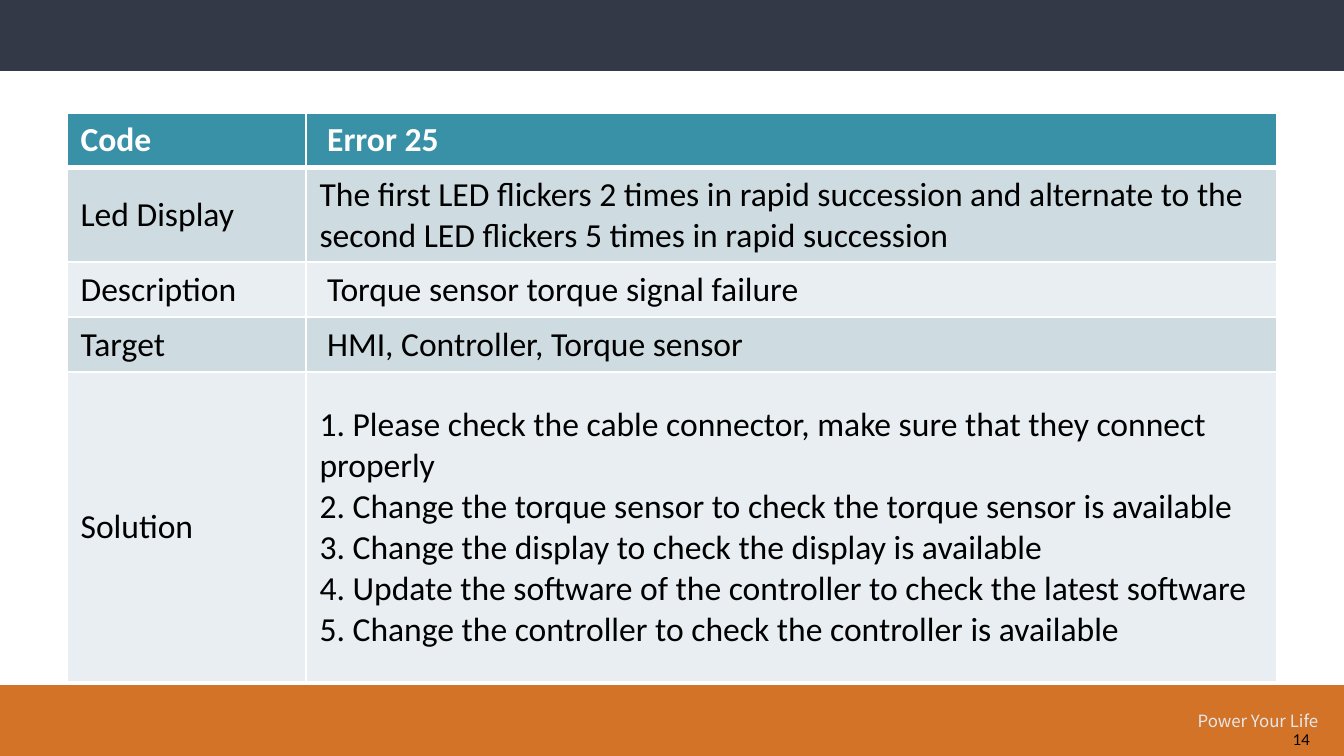
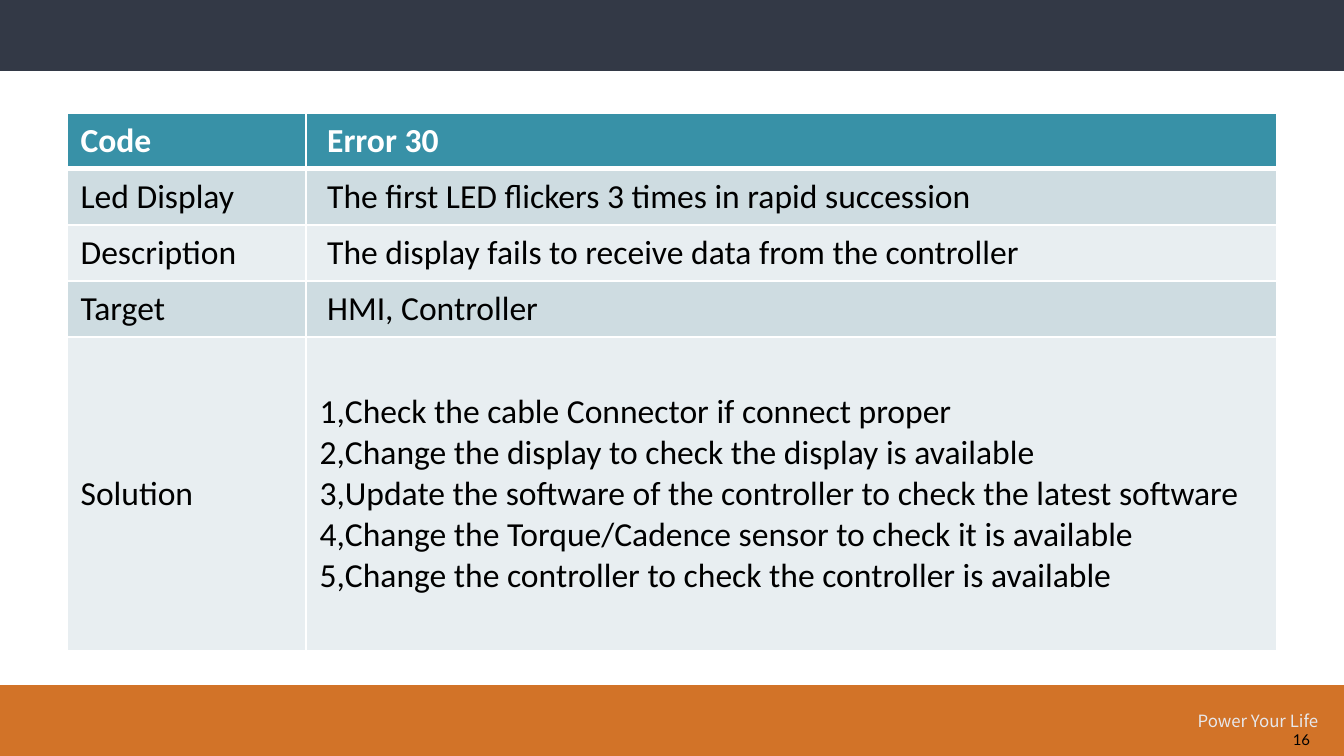
from lxml.etree import SubElement
from pptx import Presentation
from pptx.dml.color import RGBColor
from pptx.enum.shapes import MSO_SHAPE
from pptx.enum.text import MSO_ANCHOR
from pptx.oxml.ns import qn
from pptx.util import Pt

# Shared look
NAVY = RGBColor(0x33, 0x39, 0x46)
ORANGE = RGBColor(0xD2, 0x73, 0x28)
TEAL = RGBColor(0x38, 0x91, 0xA7)
ROW_DARK = RGBColor(0xCE, 0xDC, 0xE1)
ROW_LIGHT = RGBColor(0xE8, 0xEE, 0xF1)
PALE = RGBColor(0xE7, 0xE8, 0xEC)
WHITE = RGBColor(0xFF, 0xFF, 0xFF)
BLACK = RGBColor(0, 0, 0)

SLIDE_W, SLIDE_H = 720, 405
BAND_H = 38
TABLE_BOX = (36, 60.5, 648)
LABEL_W = 128
CELL_INSET, SHORT_INSET = 7.2, 11.3
SHORT_TEXT = 60  # values up to this many characters stand on one line

LABELS = ["Code", "Led Display", "Description", "Target", "Solution"]

# One entry per slide: page number, row heights, value paragraphs per row
ERROR_PAGES = [
    (14, [29.5, 50.5, 29.5, 29.5, 166], [
        ["Error 25"],
        ["The first LED flickers 2 times in rapid succession and alternate "
         "to the second LED flickers 5 times in rapid succession"],
        ["Torque sensor torque signal failure"],
        ["HMI, Controller, Torque sensor"],
        ["1. Please check the cable connector, make sure that they connect properly",
         "2. Change the torque sensor to check the torque sensor is available",
         "3. Change the display to check the display is available",
         "4. Update the software of the controller to check the latest software",
         "5. Change the controller to check the controller is available"],
    ]),
    (16, [30, 30, 30, 30, 168], [
        ["Error 30"],
        ["The first LED flickers 3 times in rapid succession"],
        ["The display fails to receive data from the controller"],
        ["HMI, Controller"],
        ["1,Check the cable Connector if connect proper",
         "2,Change the display to check the display is available",
         "3,Update the software of the controller to check the latest software",
         "4,Change the Torque/Cadence sensor to check it is available",
         "5,Change the controller to check the controller is available"],
    ]),
]


def write(frame, lines, *, size, font, color, bold=False):
    """Fill a text frame with one paragraph per line."""
    for index, line in enumerate(lines):
        para = frame.paragraphs[0] if index == 0 else frame.add_paragraph()
        span = para.add_run()
        span.text = line
        span.font.size = Pt(size)
        span.font.name = font
        span.font.color.rgb = color
        span.font.bold = bold


def add_band(page, top, color):
    band = page.shapes.add_shape(MSO_SHAPE.RECTANGLE, 0, Pt(top),
                                 Pt(SLIDE_W), Pt(BAND_H))
    band.shadow.inherit = False
    band.fill.solid()
    band.fill.fore_color.rgb = color
    band.line.fill.background()


def add_note(page, box, text, **style):
    note = page.shapes.add_textbox(*(Pt(length) for length in box))
    note.text_frame.word_wrap = True
    write(note.text_frame, [text], **style)


def add_frame(page, number):
    """Top band, bottom band, motto and page number."""
    foot = SLIDE_H - BAND_H
    add_band(page, 0, NAVY)
    add_band(page, foot, ORANGE)
    add_note(page, (634.5, foot + 10.3, 85.5, 18), "Power Your Life",
             size=9, font="Noto Sans CJK SC", color=PALE)
    add_note(page, (685.5, foot + 21, 168, 14.5), str(number),
             size=8, font="Lato", color=BLACK)


def set_borders(cell, **widths):
    """White cell borders; widths are given by side: L, R, T, B."""
    props = cell._tc.get_or_add_tcPr()
    for side, width in widths.items():
        line = SubElement(props, qn(f"a:ln{side}"), w=str(Pt(width)))
        fill = SubElement(line, qn("a:solidFill"))
        SubElement(fill, qn("a:srgbClr"), val=str(WHITE))


def format_cell(cell, lines, row):
    header = row == 0
    set_borders(cell, L=1, R=1, T=3 if row == 1 else 1, B=3 if header else 1)
    cell.fill.solid()
    cell.fill.fore_color.rgb = TEAL if header else (ROW_LIGHT, ROW_DARK)[row % 2]
    cell.vertical_anchor = MSO_ANCHOR.MIDDLE
    write(cell.text_frame, lines, size=18, font="Calibri",
          color=WHITE if header else BLACK, bold=header)


def add_error_table(page, box, heights, values):
    left, top, width = box
    table = page.shapes.add_table(len(LABELS), 2, Pt(left), Pt(top),
                                  Pt(width), Pt(sum(heights))).table
    table.horz_banding = False
    table.columns[0].width = Pt(LABEL_W)
    table.columns[1].width = Pt(width - LABEL_W)
    for row, (label, lines, height) in enumerate(zip(LABELS, values, heights)):
        table.rows[row].height = Pt(height)
        format_cell(table.cell(row, 0), [label], row)
        value = table.cell(row, 1)
        format_cell(value, lines, row)
        short = len(lines) == 1 and len(lines[0]) <= SHORT_TEXT
        value.margin_left = Pt(SHORT_INSET if short else CELL_INSET)


def main():
    deck = Presentation()
    deck.slide_width, deck.slide_height = Pt(SLIDE_W), Pt(SLIDE_H)
    blank = deck.slide_layouts[6]
    for number, heights, values in ERROR_PAGES:
        page = deck.slides.add_slide(blank)
        add_frame(page, number)
        add_error_table(page, TABLE_BOX, heights, values)
    deck.save("out.pptx")


if __name__ == "__main__":
    main()
